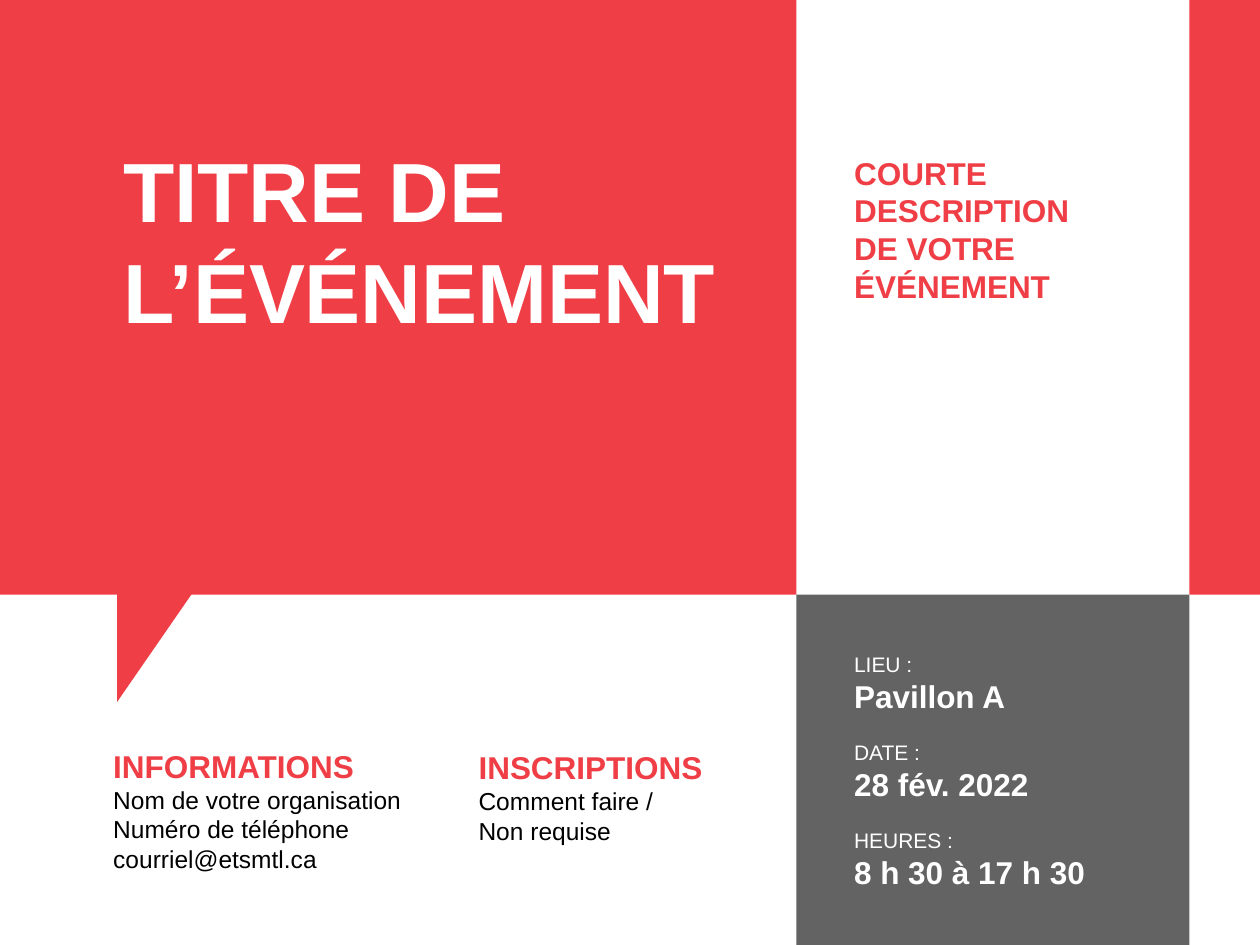
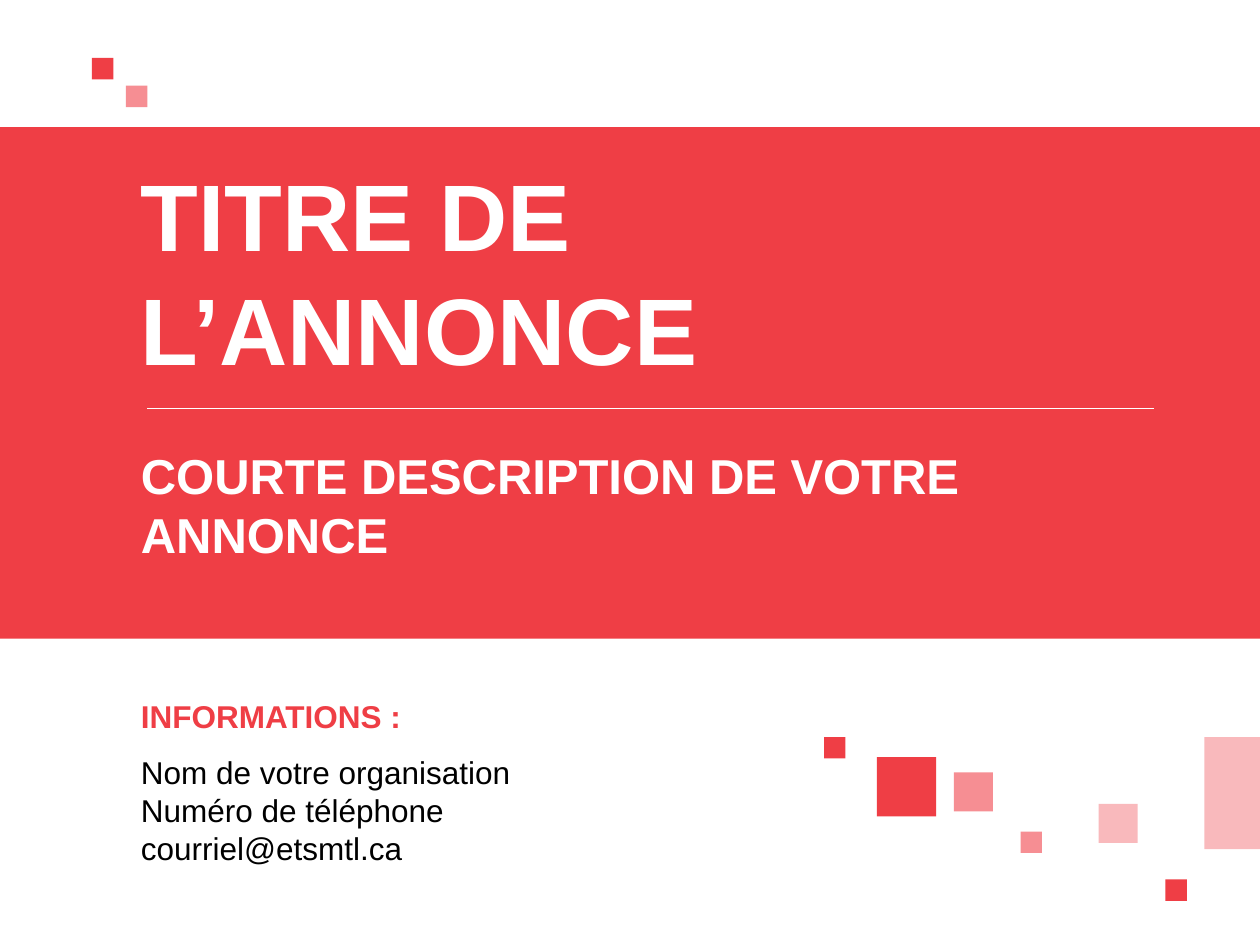
from pptx import Presentation
from pptx.dml.color import RGBColor
from pptx.enum.shapes import MSO_CONNECTOR as Connector, MSO_SHAPE as Preset
from pptx.enum.text import MSO_AUTO_SIZE as AutoSize
from pptx.oxml.ns import qn
from pptx.util import Inches, Pt
from lxml import etree

COLORS = {
    "red": "EF3E45",
    "rose": "F68E93",
    "pale": "F9B9BC",
    "grey": "646363",
    "white": "FFFFFF",
    "black": "000000",
}
COLUMNS, ROWS = 100, 75
CONTACT = ["Nom de votre organisation", "Numéro de téléphone", "courriel@etsmtl.ca"]


class Poster:
    """Draws styled elements on the current slide, on a grid of 100 columns by 75 rows."""

    font = "Arial"

    def __init__(self):
        self.presentation = Presentation()
        self.presentation.slide_width = Inches(10)
        self.presentation.slide_height = Inches(7.5)
        self.cell_width = self.presentation.slide_width / COLUMNS
        self.cell_height = self.presentation.slide_height / ROWS
        self.slide = None

    def new_slide(self):
        self.slide = self.presentation.slides.add_slide(self.presentation.slide_layouts[6])

    def point(self, column, row):
        return round(column * self.cell_width), round(row * self.cell_height)

    def color(self, name):
        return RGBColor.from_string(COLORS[name])

    def paint(self, shape, color):
        shape.shadow.inherit = False
        shape.fill.solid()
        shape.fill.fore_color.rgb = self.color(color)
        shape.line.fill.background()

    def block(self, column, row, width, height, color):
        shape = self.slide.shapes.add_shape(
            Preset.RECTANGLE, *self.point(column, row), *self.point(width, height))
        self.paint(shape, color)

    def outline(self, corners, color):
        start, *others = [self.point(*corner) for corner in corners]
        builder = self.slide.shapes.build_freeform(*start)
        builder.add_line_segments(others, close=True)
        self.paint(builder.convert_to_shape(), color)

    def rule(self, column, row, width, color):
        line = self.slide.shapes.add_connector(
            Connector.STRAIGHT, *self.point(column, row), *self.point(column + width, row))
        line.line.color.rgb = self.color(color)
        line.line.width = Pt(0.5)
        etree.SubElement(line._element.spPr, qn("a:effectLst"))

    def text(self, column, row, width, height, lines):
        box = self.slide.shapes.add_textbox(*self.point(column, row), *self.point(width, height))
        frame = box.text_frame
        frame.word_wrap = True
        frame.auto_size = AutoSize.SHAPE_TO_FIT_TEXT
        frame.text = "\n".join(line["text"] for line in lines)
        for paragraph, line in zip(frame.paragraphs, lines):
            paragraph.line_spacing = line.get("spacing")
            if "before" in line:
                paragraph.space_before = Pt(line["before"])
            for run in paragraph.runs:
                run.font.name = self.font
                run.font.size = Pt(line["size"])
                run.font.bold = line.get("bold", False)
                run.font.color.rgb = self.color(line["color"])


def heading(text, size=18, color="red", **extra):
    return dict(text=text, size=size, color=color, bold=True, **extra)


def body(text, size=14, color="black", **extra):
    return dict(text=text, size=size, color=color, **extra)


def draw_event(poster):
    main_width, side_width, band_height = 63.2, 31.2, 47.2
    side_end = main_width + side_width
    poster.new_slide()
    poster.block(0, 0, main_width, band_height, "red")
    poster.text(8.8, 10.5, 51, 17.2, [heading("TITRE DE L’ÉVÉNEMENT", 48, "white")])
    poster.text(66.8, 11.7, 25.8, 13.1,
                [heading("COURTE DESCRIPTION"), heading("DE VOTRE ÉVÉNEMENT")])
    poster.block(main_width, band_height, side_width, ROWS - band_height, "grey")
    poster.text(8, 58.8, 25.5, 11.1,
                [heading("INFORMATIONS"), *[body(line) for line in CONTACT]])

    details = []
    for label, value in [("LIEU :", "Pavillon A"), ("DATE :", "28 fév. 2022"),
                         ("HEURES :", "8 h 30 à 17 h 30")]:
        gap = {"before": 14.4} if details else {}
        details += [body(label, 12, "white", **gap), heading(value, color="white")]
    poster.text(66.8, 51.2, 20.7, 20.2, details)

    poster.outline([(9.3, 45.9), (9.3, 55.7), (15.8, 46.3)], "red")
    poster.block(side_end, 0, COLUMNS - side_end, band_height, "red")
    poster.text(37, 58.9, 20.7, 8.8,
                [heading("INSCRIPTIONS"), body("Comment faire /"), body("Non requise")])


def draw_announcement(poster):
    left = 10.2
    small, medium, large = 1.7, 3.1, 4.7
    poster.new_slide()
    poster.block(0, 10.1, COLUMNS, 40.6, "red")
    poster.text(left, 12, 85.3, 19.2,
                [heading("TITRE DE", 54, "white"), heading("L’ANNONCE", 54, "white")])
    poster.text(left, 34.9, 82.3, 10.4,
                [heading("COURTE DESCRIPTION DE VOTRE ANNONCE", 28, "white")])
    organisation, *contact = CONTACT
    poster.text(left, 53.3, 38.5, 16.2,
                [heading("INFORMATIONS :", spacing=1.5), body(organisation, 18, spacing=1.5),
                 *[body(line, 18) for line in contact]])
    poster.rule(11.7, 32.4, 79.9, "white")
    for column, row, side, color in [
        (69.6, 60.1, large, "red"),
        (75.7, 61.3, medium, "rose"),
        (81, 66, small, "rose"),
        (87.2, 63.8, medium, "pale"),
        (92.5, 69.8, small, "red"),
        (65.4, 58.5, small, "red"),
        (10, 6.8, small, "rose"),
        (7.3, 4.6, small, "red"),
    ]:
        poster.block(column, row, side, side, color)
    poster.block(95.6, 58.5, COLUMNS - 95.6, 8.9, "pale")


def main():
    poster = Poster()
    draw_event(poster)
    draw_announcement(poster)
    poster.presentation.save("out.pptx")


if __name__ == "__main__":
    main()
